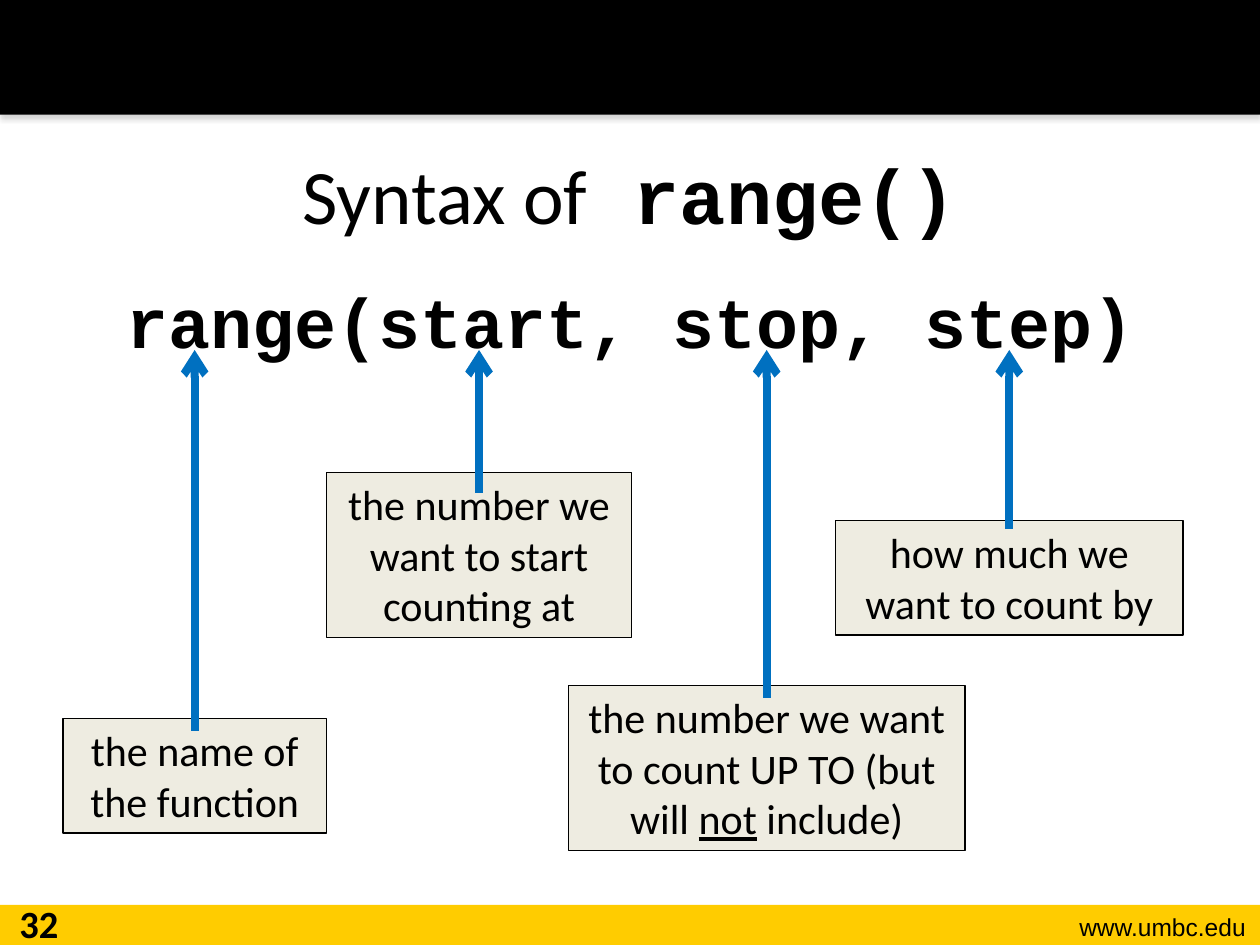
from pptx import Presentation
from pptx.dml.color import RGBColor
from pptx.enum.shapes import MSO_CONNECTOR, MSO_SHAPE
from pptx.enum.text import MSO_ANCHOR, PP_ALIGN
from pptx.oxml import parse_xml
from pptx.oxml.ns import nsdecls, qn
from pptx.util import Pt

RECT, STRAIGHT = MSO_SHAPE.RECTANGLE, MSO_CONNECTOR.STRAIGHT
CENTER, RIGHT = PP_ALIGN.CENTER, PP_ALIGN.RIGHT
TOP, MIDDLE = MSO_ANCHOR.TOP, MSO_ANCHOR.MIDDLE


def rgb(color):
    return RGBColor.from_string(color)


class Deck:
    black, gold, beige, blue = "000000", "FFCC00", "EEECE1", "0070C0"
    sans, code, plain = "Calibri", "Courier New", "Arial"

    def __init__(self, prs):
        self.s = prs.slides.add_slide(prs.slide_layouts[1])

    def add_runs(self, tf, runs, size, font, bold=False, align=CENTER):
        """Fill a text frame; each run is its text plus optional font overrides."""
        tf.word_wrap = True
        p = tf.paragraphs[0]
        p.alignment = align
        for text, overrides in runs:
            r = p.add_run()
            r.text = text
            r.font.size, r.font.name = Pt(size), overrides.get("name", font)
            r.font.bold = overrides.get("bold", bold)
            r.font.underline = overrides.get("underline")
            r.font.color.rgb = rgb(self.black)

    def rect(self, x, y, w, h, fill, border=None):
        sp = self.s.shapes.add_shape(RECT, Pt(x), Pt(y), Pt(w), Pt(h))
        sp.shadow.inherit = False
        sp.fill.solid()
        sp.fill.fore_color.rgb = rgb(fill)
        if border:
            sp.line.color.rgb = rgb(border)
            sp.line.width = Pt(0.75)
        else:
            sp.line.fill.background()
        return sp

    def text(self, x, y, w, h, text, size, font, **style):
        sp = self.s.shapes.add_textbox(Pt(x), Pt(y), Pt(w), Pt(h))
        self.add_runs(sp.text_frame, [(text, {})], size, font, **style)

    def placeholder(self, sp, x, y, w, h, anchor):
        sp.left, sp.top, sp.width, sp.height = Pt(x), Pt(y), Pt(w), Pt(h)
        sp.text_frame.vertical_anchor = anchor
        return sp.text_frame

    def arrow(self, x, y1, y2):
        c = self.s.shapes.add_connector(STRAIGHT, Pt(x), Pt(y1), Pt(x), Pt(y2))
        c.line.color.rgb = rgb(self.blue)
        c.line.width = Pt(4.5)
        spPr = c._element.spPr
        spPr.find(qn("a:ln")).append(
            parse_xml(f'<a:tailEnd {nsdecls("a")} type="arrow"/>'))
        spPr.append(parse_xml(f'<a:effectLst {nsdecls("a")}/>'))

    def callout(self, x, y, w, h, runs, overlap):
        """A note whose arrow rises from inside its top edge to the code line."""
        sp = self.rect(x, y, w, h, self.beige, self.black)
        sp.text_frame.vertical_anchor = TOP
        self.add_runs(sp.text_frame, runs, 24, self.sans)
        self.arrow(x + w / 2, y + overlap, 200)


def main():
    prs = Presentation()
    prs.slide_width, prs.slide_height = Pt(720), Pt(540)
    d = Deck(prs)
    title, body = d.s.placeholders

    # Footer and header bands
    d.rect(0, 517, 720, 23, d.gold)
    header = d.rect(0, 0, 720, 65.5, d.black)
    header._element.spPr.find(qn("a:effectLst")).append(parse_xml(
        f'<a:outerShdw {nsdecls("a")} blurRad="{Pt(3.1)}" dist="{Pt(1.8)}" '
        'dir="5400000" rotWithShape="0"><a:srgbClr val="808080">'
        '<a:alpha val="35000"/></a:srgbClr></a:outerShdw>'))
    d.text(576, 517.5, 143, 24.5, "www.umbc.edu", 14, d.plain, align=RIGHT)
    d.text(0, 511, 44.5, 29, "32", 22, d.sans, bold=True)

    # Title
    tf = d.placeholder(title, 36, 65.5, 648, 90, MIDDLE)
    d.add_runs(tf, [("Syntax of", {}),
                    (" range()", {"name": d.code, "bold": True})], 44, d.sans)

    # Code line, without a bullet
    tf = d.placeholder(body, 36, 155.5, 648, 355.5, TOP)
    pPr = tf.paragraphs[0]._p.get_or_add_pPr()
    pPr.set("marL", "0")
    pPr.set("indent", "0")
    pPr.append(parse_xml(f'<a:buNone {nsdecls("a")}/>'))
    d.add_runs(tf, [("range(start, stop, step)", {})], 40, d.code, bold=True)

    # Notes on each part of the call
    two_lines, three_lines = 65.5, 94.5
    d.callout(36, 410.5, 150.5, two_lines,
              [("the name of the function", {})], 7)
    d.callout(186.5, 270, 174.5, three_lines,
              [("the number we want to start counting at", {})], 11.5)
    d.callout(324.7, 391.7, 226.8, three_lines,
              [("the number we want to count UP TO (but will ", {}),
               ("not", {"underline": True}), (" include)", {})], 7)
    d.callout(477.4, 297.4, 198.7, two_lines,
              [("how much we want to count by", {})], 5)

    prs.save("out.pptx")


if __name__ == "__main__":
    main()
